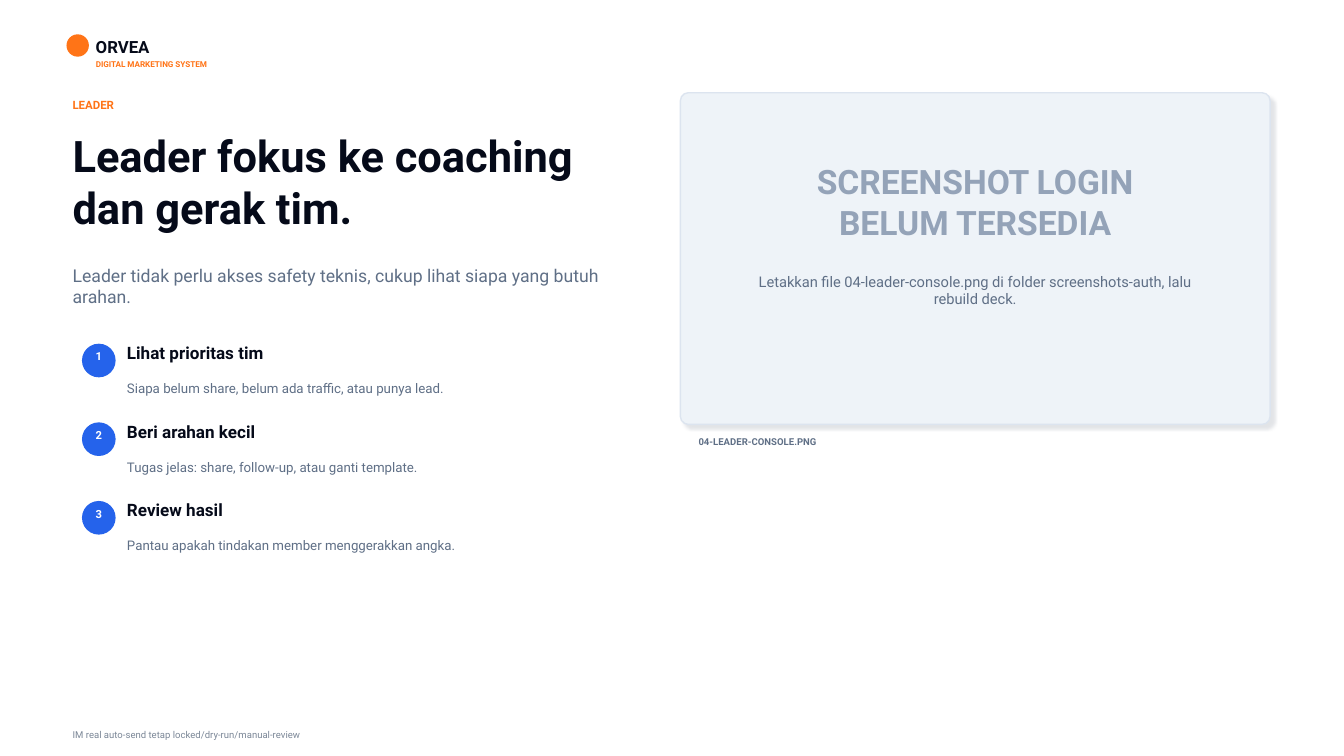
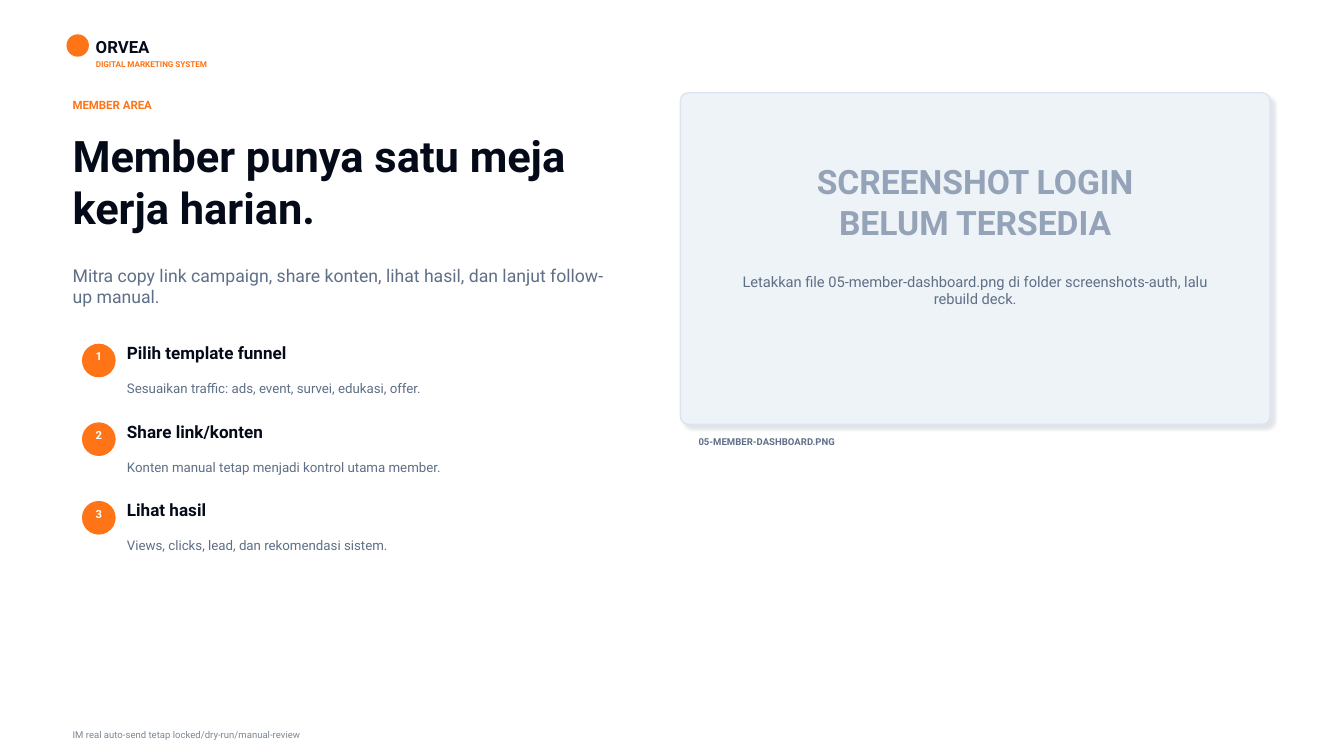
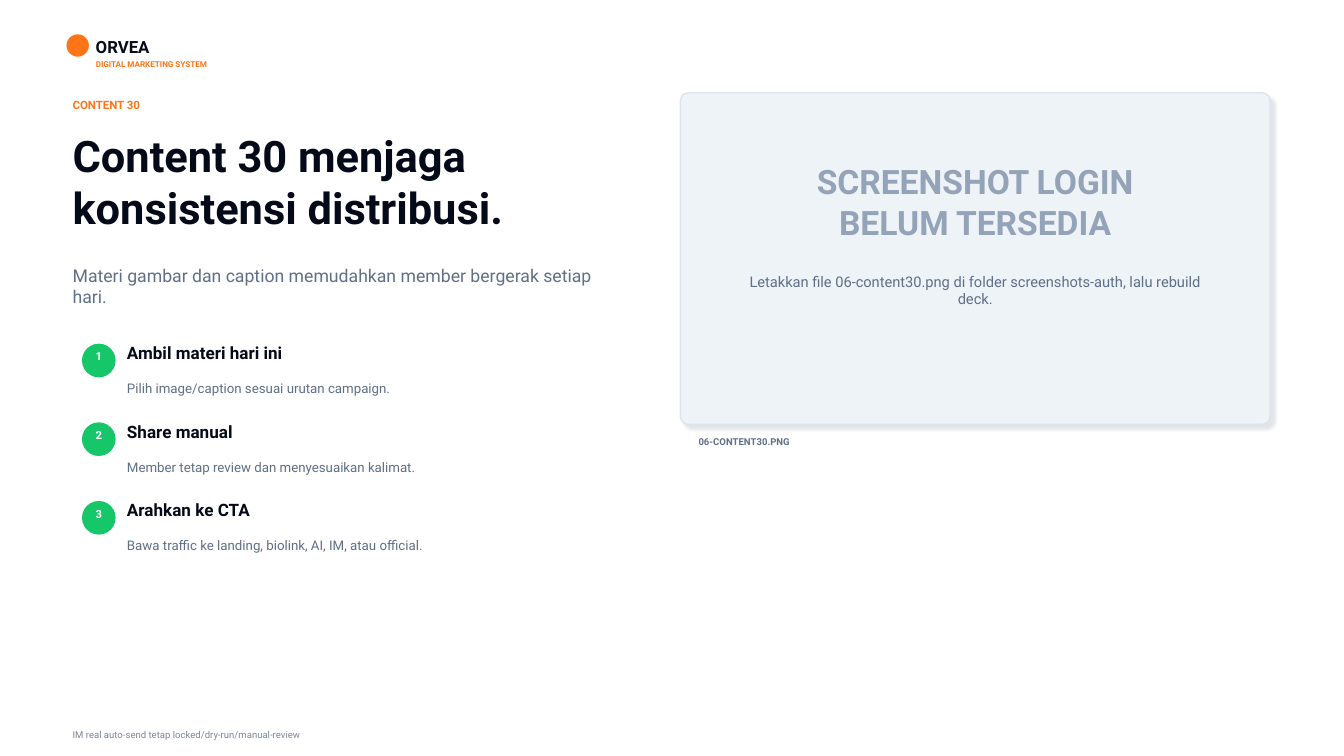
import pptx
import pptx.util
import pptx.dml.color
import pptx.enum.shapes
import pptx.enum.text
import pptx.oxml

Pt = pptx.util.Pt
KIND = pptx.enum.shapes.MSO_SHAPE
ALIGN = pptx.enum.text.PP_ALIGN

# Shared style
FONT = "Roboto"
INK, GREY, PALE, MUTE = "050A19", "5F6F86", "94A3B8", "7B8797"
WHITE, ORANGE, BLUE, GREEN = "FFFFFF", "FF7417", "2563EB", "16C76A"
PANEL, EDGE = "EEF3F8", "DCE4EF"
LEFT, WIDE = 51.84, 392.4
STEP = 56.16

SHADOW = (
    '<a:outerShdw xmlns:a="http://schemas.openxmlformats.org/drawingml/2006/main"'
    ' blurRad="25400" dist="50800" dir="2700000" algn="tl" rotWithShape="0">'
    '<a:srgbClr val="23314A"><a:alpha val="12000"/></a:srgbClr></a:outerShdw>'
)


def tint(code):
    return pptx.dml.color.RGBColor.from_string(code)


def write(frame, text, size=10, color=INK, bold=False, align=ALIGN.LEFT):
    frame.word_wrap = True
    frame.vertical_anchor = pptx.enum.text.MSO_ANCHOR.MIDDLE
    frame.margin_left = frame.margin_right = 0
    frame.margin_top = frame.margin_bottom = 0
    for i, line in enumerate(text.split("\n")):
        para = frame.add_paragraph() if i else frame.paragraphs[0]
        para.alignment = align
        run = para.add_run()
        run.text = line
        run.font.name = FONT
        run.font.size = Pt(size)
        run.font.bold = bold
        run.font.color.rgb = tint(color)


class Deck:
    def __init__(self):
        self.file = pptx.Presentation()
        self.file.slide_width, self.file.slide_height = Pt(960), Pt(540)
        self.slide = None

    def text(self, x, y, w, h, text, **form):
        box = self.slide.shapes.add_textbox(Pt(x), Pt(y), Pt(w), Pt(h))
        write(box.text_frame, text, **form)

    def shape(self, kind, x, y, w, h, fill, line=None):
        item = self.slide.shapes.add_shape(kind, Pt(x), Pt(y), Pt(w), Pt(h))
        item.shadow.inherit = False
        item.fill.solid()
        item.fill.fore_color.rgb = tint(fill)
        item.line.color.rgb = tint(line or fill)
        item.line.width = Pt(1)
        return item

    # Brand line and footer on every slide
    def start(self):
        self.slide = self.file.slides.add_slide(self.file.slide_layouts[6])
        back = self.slide.background.fill
        back.solid()
        back.fore_color.rgb = tint(WHITE)
        self.shape(KIND.OVAL, 48, 25, 15, 15, ORANGE)
        self.text(68.4, 25.92, 108, 14.4, "ORVEA", size=12, bold=True)
        self.text(68.4, 41.76, 169.2, 8.64, "DIGITAL MARKETING SYSTEM",
                  size=5.8, color=ORANGE, bold=True)
        self.text(LEFT, 519.84, 518.4, 10.08,
                  "IM real auto-send tetap locked/dry-run/manual-review",
                  size=6.8, color=MUTE)

    def head(self, label, title, lead):
        self.text(LEFT, 68.4, WIDE, 12.96, label, size=8.2, color=ORANGE, bold=True)
        self.text(LEFT, 92.88, WIDE, 73.44, title, size=31, bold=True)
        self.text(LEFT, 182.16, WIDE, 44.64, lead, size=12.6, color=GREY)

    # Panel that stands in for a missing screenshot
    def panel(self, name):
        card = self.shape(KIND.ROUNDED_RECTANGLE, 486, 66.24, 421.2, 236.88, PANEL, EDGE)
        card.adjustments[0] = 0.024
        effect = card._element.spPr.find(pptx.oxml.ns.qn("a:effectLst"))
        effect.append(pptx.oxml.parse_xml(SHADOW))
        self.text(511.92, 120.96, 369.36, 46.08, "SCREENSHOT LOGIN\nBELUM TERSEDIA",
                  size=24, color=PALE, bold=True, align=ALIGN.CENTER)
        self.text(525.6, 187.2, 342, 40.32,
                  f"Letakkan file {name} di folder screenshots-auth, lalu rebuild deck.",
                  size=10.5, color=GREY, align=ALIGN.CENTER)
        self.text(498.96, 310.32, 395.28, 10.08, name.upper(),
                  size=6.8, color=GREY, bold=True)

    # Numbered steps
    def steps(self, rows, color):
        for i, (title, note) in enumerate(rows):
            y = 246 + i * STEP
            self.shape(KIND.OVAL, 59.04, y, 23.04, 23.04, color)
            self.text(59.04, y + 5.6, 23.04, 5.76, str(i + 1), size=8,
                      color=WHITE, bold=True, align=ALIGN.CENTER)
            self.text(90.72, y - 0.6, 345.6, 12.96, title, size=12.2, bold=True)
            self.text(90.72, y + 19, 356.4, 24.48, note, size=9.5, color=GREY)


# Content: label, title, lead, file name, step colour, steps
PAGES = [
    ("LEADER", "Leader fokus ke coaching dan gerak tim.",
     "Leader tidak perlu akses safety teknis, cukup lihat siapa yang butuh arahan.",
     "04-leader-console.png", BLUE, [
         ("Lihat prioritas tim", "Siapa belum share, belum ada traffic, atau punya lead."),
         ("Beri arahan kecil", "Tugas jelas: share, follow-up, atau ganti template."),
         ("Review hasil", "Pantau apakah tindakan member menggerakkan angka.")]),
    ("MEMBER AREA", "Member punya satu meja kerja harian.",
     "Mitra copy link campaign, share konten, lihat hasil, dan lanjut follow-up manual.",
     "05-member-dashboard.png", ORANGE, [
         ("Pilih template funnel", "Sesuaikan traffic: ads, event, survei, edukasi, offer."),
         ("Share link/konten", "Konten manual tetap menjadi kontrol utama member."),
         ("Lihat hasil", "Views, clicks, lead, dan rekomendasi sistem.")]),
    ("CONTENT 30", "Content 30 menjaga konsistensi distribusi.",
     "Materi gambar dan caption memudahkan member bergerak setiap hari.",
     "06-content30.png", GREEN, [
         ("Ambil materi hari ini", "Pilih image/caption sesuai urutan campaign."),
         ("Share manual", "Member tetap review dan menyesuaikan kalimat."),
         ("Arahkan ke CTA", "Bawa traffic ke landing, biolink, AI, IM, atau official.")]),
]


def main():
    deck = Deck()
    for label, title, lead, name, color, rows in PAGES:
        deck.start()
        deck.head(label, title, lead)
        deck.panel(name)
        deck.steps(rows, color)
    deck.file.save("out.pptx")


if __name__ == "__main__":
    main()
